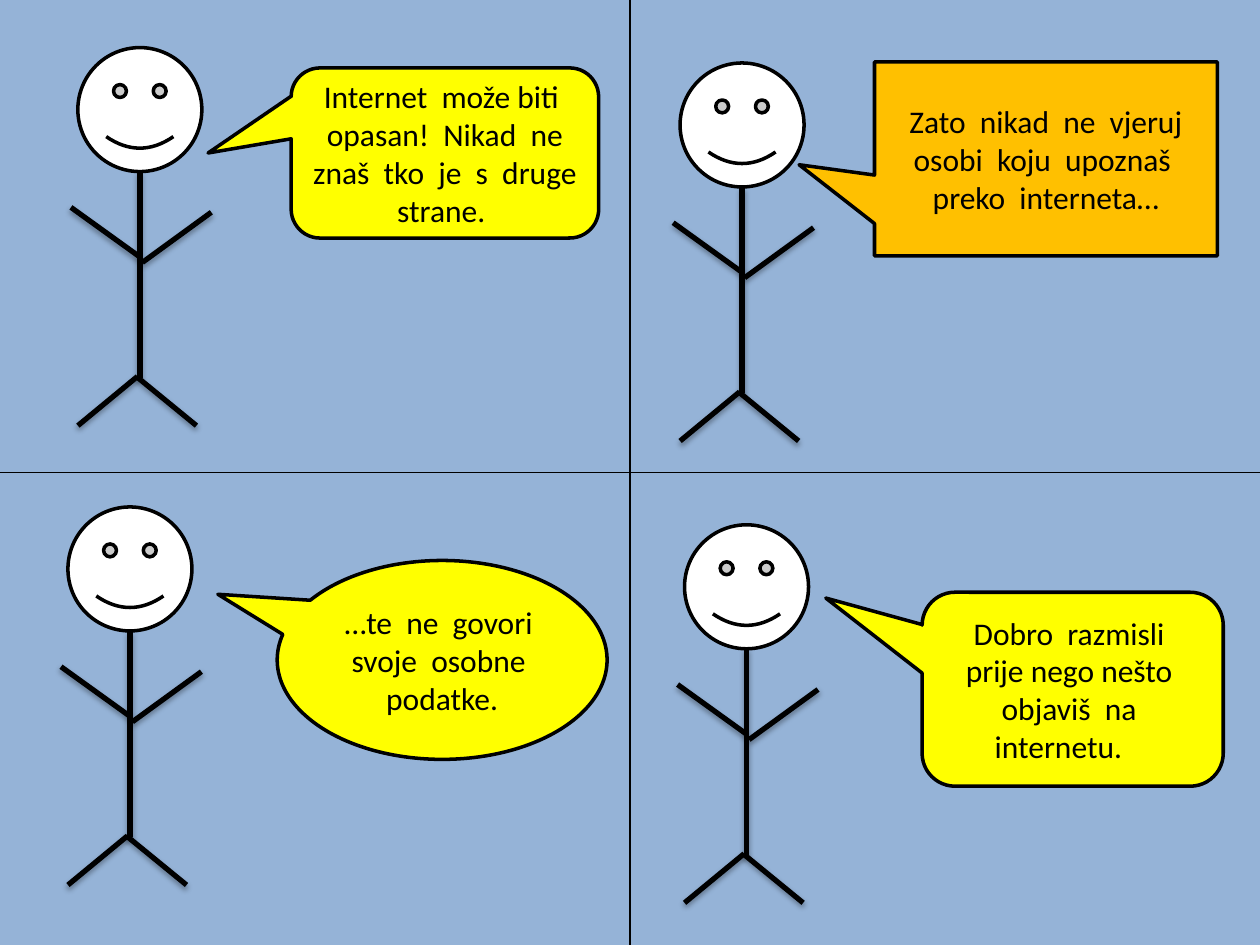
import dataclasses
import typing

import lxml.etree
import pptx
import pptx.dml.color
import pptx.enum.shapes
import pptx.enum.text
import pptx.oxml.ns
import pptx.util

Cm = pptx.util.Cm
Pt = pptx.util.Pt
Shape = pptx.enum.shapes.MSO_SHAPE
qn = pptx.oxml.ns.qn


def rgb(code):
    return pptx.dml.color.RGBColor.from_string(code)


@dataclasses.dataclass
class Theme:
    background: str = "95B3D7"
    ink: str = "000000"
    face: str = "FFFFFF"
    yellow: str = "FFFF00"
    orange: str = "FFC000"
    font: str = "Calibri"
    text_size: float = 18
    divider_width: float = 0.75
    outline_width: float = 2
    limb_width: float = 3


HEAD_SIZE = 2.5
SMILE = 0.047
LIMBS = [
    (1.25, 2.5, 1.25, 6.65),
    (0, 7.62, 1.2, 6.63),
    (1.18, 6.63, 2.39, 7.62),
    (-0.14, 3.22, 1.25, 4.22),
    (1.3, 4.33, 2.69, 3.32),
]


@dataclasses.dataclass
class ComicPage:
    page: typing.Any
    theme: Theme

    def background(self):
        fill = self.page.background.fill
        fill.solid()
        fill.fore_color.rgb = rgb(self.theme.background)

    def line(self, parent, ends, width, shadow=False):
        line = parent.shapes.add_connector(
            pptx.enum.shapes.MSO_CONNECTOR.STRAIGHT, *map(Cm, ends))
        line.line.color.rgb = rgb(self.theme.ink)
        line.line.width = Pt(width)
        effects = lxml.etree.SubElement(line._element.spPr, qn("a:effectLst"))
        if shadow:
            outer = lxml.etree.SubElement(
                effects, qn("a:outerShdw"), blurRad=str(Pt(3.1)),
                dist=str(Pt(1.8)), dir="5400000", rotWithShape="0")
            color = lxml.etree.SubElement(
                outer, qn("a:srgbClr"), val=self.theme.ink)
            lxml.etree.SubElement(color, qn("a:alpha"), val="35000")

    def shape(self, parent, kind, place, color, adjustments):
        shape = parent.shapes.add_shape(kind, *map(Cm, place))
        shape.shadow.inherit = False
        shape.fill.solid()
        shape.fill.fore_color.rgb = rgb(color)
        shape.line.color.rgb = rgb(self.theme.ink)
        shape.line.width = Pt(self.theme.outline_width)
        for index, value in enumerate(adjustments):
            shape.adjustments[index] = value
        return shape

    def dividers(self, width, height):
        group = self.page.shapes.add_group_shape()
        for ends in [(width / 2, 0, width / 2, height),
                     (0, height / 2, width, height / 2)]:
            self.line(group, ends, self.theme.divider_width)

    def stick_figure(self, left, top):
        group = self.page.shapes.add_group_shape()
        self.shape(group, Shape.SMILEY_FACE,
                   (left, top, HEAD_SIZE, HEAD_SIZE), self.theme.face, [SMILE])
        for x1, y1, x2, y2 in LIMBS:
            self.line(group, (left + x1, top + y1, left + x2, top + y2),
                      self.theme.limb_width, shadow=True)

    def bubble(self, kind, place, color, adjustments, text):
        box = self.shape(self.page, kind, place, color, adjustments)
        frame = box.text_frame
        frame_format = {
            "word_wrap": True,
            "vertical_anchor": pptx.enum.text.MSO_ANCHOR.MIDDLE,
        }
        for name, value in frame_format.items():
            setattr(frame, name, value)
        para = frame.paragraphs[0]
        para.alignment = pptx.enum.text.PP_ALIGN.CENTER
        span = para.add_run()
        span.text = text
        font_format = {
            "name": self.theme.font,
            "size": Pt(self.theme.text_size),
        }
        for name, value in font_format.items():
            setattr(span.font, name, value)
        span.font.color.rgb = rgb(self.theme.ink)


def main():
    width, height = 25.4, 19.05
    deck = pptx.Presentation()
    deck.slide_width = Cm(width)
    deck.slide_height = Cm(height)
    theme = Theme()
    comic = ComicPage(deck.slides.add_slide(deck.slide_layouts[6]), theme)
    comic.background()
    comic.dividers(width, height)

    for head in [(1.57, 0.96), (13.8, 10.58), (1.37, 10.22), (13.71, 1.27)]:
        comic.stick_figure(*head)

    bubbles = [
        (Shape.ROUNDED_RECTANGULAR_CALLOUT, (5.87, 1.37, 6.2, 3.43),
         theme.yellow, (-0.77, 0, 0.17),
         "Internet  može biti  opasan!  Nikad  ne "
         "znaš  tko  je  s  druge  strane.  "),
        (Shape.RECTANGULAR_CALLOUT, (17.63, 1.25, 6.91, 3.91),
         theme.orange, (-0.72, 0.03),
         "Zato  nikad  ne  vjeruj osobi  koju  upoznaš  preko  interneta…"),
        (Shape.OVAL_CALLOUT, (5.59, 11.3, 6.65, 4.01),
         theme.yellow, (-0.68, -0.33),
         "…te  ne  govori  svoje  osobne  podatke."),
        (Shape.ROUNDED_RECTANGULAR_CALLOUT, (18.59, 11.94, 6.07, 3.91),
         theme.yellow, (-0.82, -0.47, 0.17),
         "Dobro  razmisli  prije nego nešto  objaviš  na  internetu.    "),
    ]
    for bubble in bubbles:
        comic.bubble(*bubble)

    deck.save("out.pptx")


if __name__ == "__main__":
    main()
